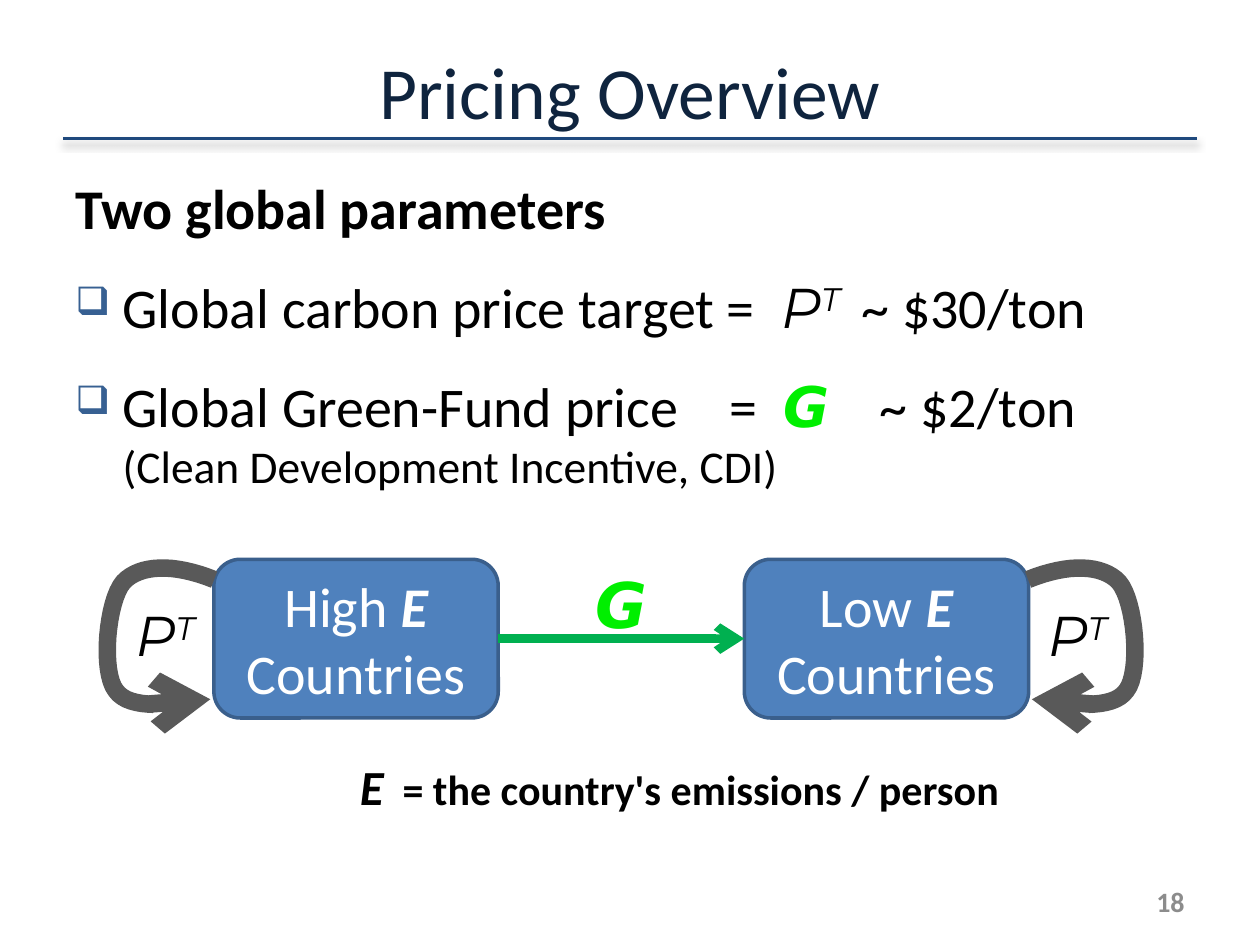
from lxml import etree
from pptx import Presentation
from pptx import util as u
from pptx.dml.color import RGBColor
from pptx.enum import shapes, text
from pptx.oxml.ns import qn

Pt = u.Pt
COLORS = {
    "title": "0F243E", "rule": "1F497D", "text": "000000", "bullet": "376092",
    "box": "4F81BD", "box_line": "3A5F8C", "white": "FFFFFF", "fund": "00EF00",
    "arrow": "00B050", "loop": "595959", "number": "8C8C8C",
}
RGB = {name: RGBColor.from_string(value) for name, value in COLORS.items()}

# Runs are (text, attributes); spc widens a space, in hundredths of a point.
TARGET = [("P", {"font": "Montserrat", "i": "1"}),
          ("T", {"font": "Montserrat", "i": "1", "baseline": "30000"})]
FUND = [("G", {"font": "DejaVu Sans", "color": "fund", "b": "1", "i": "1"})]
EMISSIONS = ("E", {"b": "1", "i": "1"})


def write(paragraph, runs, size, color="text", align=text.PP_ALIGN.LEFT, bold=False):
    """Set the paragraph's font and add its runs with their own differences."""
    paragraph.alignment = align
    paragraph.font.name = "Calibri"
    paragraph.font.size = Pt(size)
    paragraph.font.bold = bold
    paragraph.font.color.rgb = RGB[color]
    for words, attributes in runs:
        if words == "\n":
            paragraph.add_line_break()
            continue
        run = paragraph.add_run()
        run.text = words
        for name, value in attributes.items():
            if name == "font":
                run.font.name = value
            elif name == "color":
                run.font.color.rgb = RGB[value]
            else:
                run.font._element.set(name, value)


def add_text(left, top, width, height, margins=(7.2, 3.6, 7.2, 3.6),
             anchor=text.MSO_ANCHOR.TOP):
    """Add a wrapping text box; margins are left, top, right, bottom."""
    frame = slide.shapes.add_textbox(Pt(left), Pt(top), Pt(width), Pt(height)).text_frame
    frame.word_wrap = True
    frame.vertical_anchor = anchor
    (frame.margin_left, frame.margin_top,
     frame.margin_right, frame.margin_bottom) = map(Pt, margins)
    return frame


presentation = Presentation()
presentation.slide_width, presentation.slide_height = Pt(720), Pt(540)
slide = presentation.slides.add_slide(presentation.slide_layouts[6])
CENTER = text.PP_ALIGN.CENTER
MIDDLE = text.MSO_ANCHOR.MIDDLE

# Title and its rule with a soft shadow below
rule = slide.shapes.add_connector(shapes.MSO_CONNECTOR.STRAIGHT,
                                  Pt(36), Pt(79.2), Pt(684), Pt(79.2))
rule.line.color.rgb = RGB["rule"]
rule.line.width = Pt(1.5)
effects = etree.SubElement(rule._element.spPr, qn("a:effectLst"))
shadow = etree.SubElement(effects, qn("a:outerShdw"), blurRad=str(Pt(4)),
                          dist=str(Pt(3)), dir="5400000", rotWithShape="0")
shadow_color = etree.SubElement(shadow, qn("a:srgbClr"), val=COLORS["text"])
etree.SubElement(shadow_color, qn("a:alpha"), val="40000")

title = add_text(36, 21.6, 648, 74.2, (7.2, 0, 7.2, 14.4), MIDDLE)
write(title.paragraphs[0], [("Pricing Overview", {})], 42, "title", CENTER)

# Global parameters
body = add_text(36, 95.8, 648, 200)
heading = body.paragraphs[0]
write(heading, [("Two global parameters", {})], 32, bold=True)
heading.space_before = Pt(6.4)
parameters = [
    [("Global carbon price target =", {}), (" ", {"spc": "720"}), *TARGET,
     (" ", {"spc": "500"}), ("~ $30/ton", {})],
    [("Global Green-Fund price", {}), (" ", {"spc": "2170"}), ("=", {}),
     (" ", {"spc": "720"}), *FUND, (" ", {"spc": "2170"}), ("~ $2/ton", {}),
     ("\n", {}), ("(Clean Development Incentive, CDI)", {"sz": "2600"})],
]
for runs in parameters:
    paragraph = body.add_paragraph()
    write(paragraph, runs, 32)
    paragraph.space_before = Pt(18)
    properties = paragraph._p.get_or_add_pPr()
    properties.set("marL", str(Pt(27)))
    properties.set("indent", str(-Pt(27)))
    font_defaults = properties.find(qn("a:defRPr"))
    bullet_color = etree.Element(qn("a:buClr"))
    etree.SubElement(bullet_color, qn("a:srgbClr"), val=COLORS["bullet"])
    for element in (bullet_color,
                    etree.Element(qn("a:buSzPct"), val="70000"),
                    etree.Element(qn("a:buChar"), char="❑")):
        font_defaults.addprevious(element)

# Definition of E
definition = add_text(198.5, 428.6, 400, 42)
write(definition.paragraphs[0],
      [("E", {"sz": "2800", "i": "1"}), (" ", {"spc": "540"}),
       ("= the country's emissions / person", {})], 24, bold=True)

# Country groups
groups = []
for level, left in (("High ", 122.2), ("Low ", 425.3)):
    box = slide.shapes.add_shape(shapes.MSO_SHAPE.ROUNDED_RECTANGLE,
                                 Pt(left), Pt(319.6), Pt(162.5), Pt(90.7))
    box.shadow.inherit = False
    box.fill.solid()
    box.fill.fore_color.rgb = RGB["box"]
    box.line.color.rgb = RGB["box_line"]
    box.line.width = Pt(2)
    box.text_frame.word_wrap = True
    box.text_frame.vertical_anchor = MIDDLE
    write(box.text_frame.paragraphs[0], [(level, {}), EMISSIONS, (" Countries", {})],
          32, "white", CENTER)
    groups.append(box)

# Green-Fund flow from high to low emitters
flow = slide.shapes.add_connector(shapes.MSO_CONNECTOR.STRAIGHT,
                                  Pt(284.7), Pt(365), Pt(425.3), Pt(365))
flow.begin_connect(groups[0], 3)
flow.end_connect(groups[1], 1)
flow.line.color.rgb = RGB["arrow"]
flow.line.width = Pt(5)
etree.SubElement(flow.line._get_or_add_ln(), qn("a:tailEnd"), type="arrow")
etree.SubElement(flow._element.spPr, qn("a:effectLst"))
fund_label = add_text(284.7, 319.6, 140.6, 51)
write(fund_label.paragraphs[0], FUND, 36, align=CENTER)

# Price loops: cubic curves on the right, mirrored on the left
LOOP = [(587.5, 331.2), (610.6, 321.8), (630, 322.6), (639.4, 332.6),
        (648.7, 343.4), (652.3, 383.8), (643.7, 394.6),
        (635.8, 406.1), (610.6, 402.5), (589.7, 399.6)]
STEPS = 16
curve = [LOOP[0]]
for first in range(0, len(LOOP) - 1, 3):
    for step in range(1, STEPS + 1):
        t = step / STEPS
        weights = ((1 - t) ** 3, 3 * t * (1 - t) ** 2, 3 * t ** 2 * (1 - t), t ** 3)
        curve.append(tuple(sum(weight * point[axis] for weight, point
                               in zip(weights, LOOP[first:first + 4]))
                           for axis in (0, 1)))
for mirrored, label_left in ((False, 587.5), (True, 66.2)):
    points = [(Pt(709.9 - x if mirrored else x), Pt(y)) for x, y in curve]
    builder = slide.shapes.build_freeform(*points[0])
    builder.add_line_segments(points[1:], close=False)
    loop = builder.convert_to_shape()
    loop.shadow.inherit = False
    loop.fill.background()
    loop.line.color.rgb = RGB["loop"]
    loop.line.width = Pt(10)
    line = loop.line._get_or_add_ln()
    etree.SubElement(line, qn("a:round"))
    etree.SubElement(line, qn("a:tailEnd"), type="arrow")
    label = add_text(label_left, 343.4, 56.2, 38.9, (0, 0, 0, 0))
    write(label.paragraphs[0], TARGET, 32, align=CENTER)

number = add_text(516.2, 500.4, 167.8, 28.8, anchor=MIDDLE)
write(number.paragraphs[0], [("18", {})], 16, "number", text.PP_ALIGN.RIGHT, bold=True)

presentation.save("out.pptx")
